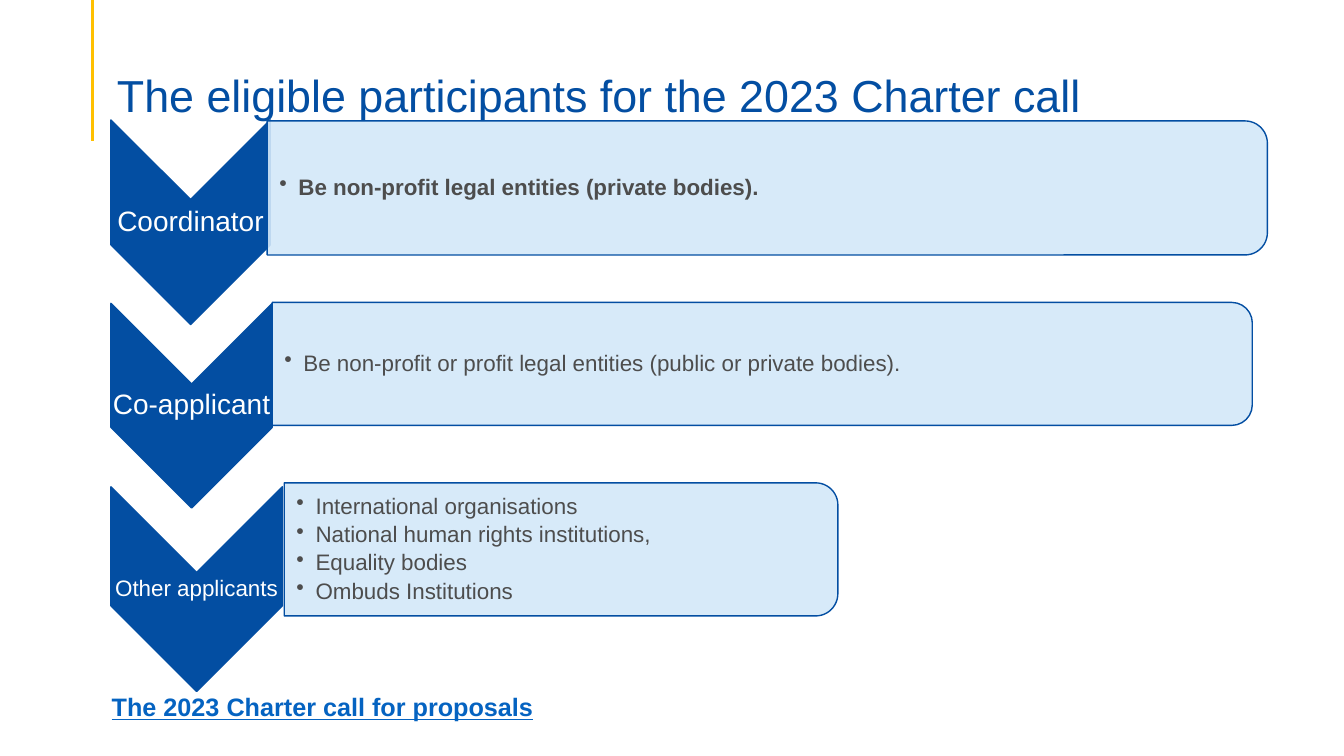
from lxml.etree import SubElement
from pptx import Presentation
from pptx.dml.color import RGBColor
from pptx.enum.shapes import MSO_CONNECTOR, MSO_SHAPE
from pptx.enum.text import MSO_ANCHOR, MSO_AUTO_SIZE, PP_ALIGN
from pptx.oxml.ns import qn
from pptx.util import Pt

PX = 9144
BLUE = RGBColor(0x03, 0x4E, 0xA2)
PALE_BLUE = RGBColor(0xD3, 0xE8, 0xF9)
YELLOW = RGBColor(0xFF, 0xC0, 0x00)
GREY = RGBColor(0x4D, 0x4D, 0x4D)
LINK_BLUE = RGBColor(0x05, 0x63, 0xC1)
WHITE = RGBColor(0xFF, 0xFF, 0xFF)

CHEVRON_LEFT, CHEVRON_TOP, CHEVRON_HEIGHT, ROW_PITCH = 110, 119, 203, 182
ROWS = [
    ("Coordinator", 20, 158, 45, (265, 120, 992, 133), True,
     ["Be non-profit legal entities (private bodies)."]),
    ("Co-applicant", 20, 160, 42, (270, 300, 972, 122), False,
     ["Be non-profit or profit legal entities (public or private bodies)."]),
    ("Other applicants", 16, 170, 33, (282, 479, 549, 132), False,
     ["International organisations", "National human rights institutions,",
      "Equality bodies", "Ombuds Institutions"]),
]


class SlideBuilder:
    font_name = "Arial"

    def __init__(self, presentation):
        self.slide = presentation.slides.add_slide(presentation.slide_layouts[5])

    def style(self, paragraph, size, color, bold=False):
        font = paragraph.font
        font.name, font.size, font.bold = self.font_name, Pt(size), bold
        font.color.rgb = color

    def frame(self, shape, insets, anchor):
        frame = shape.text_frame
        frame.word_wrap = True
        frame.auto_size = MSO_AUTO_SIZE.NONE
        frame.vertical_anchor = anchor
        (frame.margin_left, frame.margin_top,
         frame.margin_right, frame.margin_bottom) = [inset * PX for inset in insets]
        return frame

    def title(self, text, left, top, width, height):
        title = self.slide.shapes.title
        title.left, title.top = left * PX, top * PX
        title.width, title.height = width * PX, height * PX
        frame = self.frame(title, (10, 5, 10, 0), MSO_ANCHOR.BOTTOM)
        frame.text = text
        paragraph = frame.paragraphs[0]
        paragraph.alignment = PP_ALIGN.LEFT
        paragraph.line_spacing = 0.9
        self.style(paragraph, 32, BLUE)

    def line(self, x1, y1, x2, y2, color, width):
        line = self.slide.shapes.add_connector(
            MSO_CONNECTOR.STRAIGHT, x1 * PX, y1 * PX, x2 * PX, y2 * PX)
        line.line.color.rgb = color
        line.line.width = Pt(width)
        SubElement(line._element.spPr, qn("a:effectLst"))

    def turned_shape(self, kind, left, top, width, height, fill, opacity=100):
        shift = (width - height) * PX // 2
        shape = self.slide.shapes.add_shape(
            kind, left * PX + shift, top * PX - shift, height * PX, width * PX)
        shape.rotation = 90
        shape.shadow.inherit = False
        shape.fill.solid()
        shape.fill.fore_color.rgb = fill
        shape.line.color.rgb = BLUE
        shape.line.width = Pt(1)
        if opacity < 100:
            color = shape._element.spPr.find(qn("a:solidFill"))[0]
            SubElement(color, qn("a:alpha"), val=str(opacity * 1000))

    def text(self, lines, left, top, width, height, size, color, bold=False,
             insets=(1, 1, 1, 1), anchor=MSO_ANCHOR.MIDDLE):
        box = self.slide.shapes.add_textbox(left * PX, top * PX, width * PX, height * PX)
        frame = self.frame(box, insets, anchor)
        frame.text = "\n".join(lines)
        for paragraph in frame.paragraphs:
            self.style(paragraph, size, color, bold)
        return frame.paragraphs

    def label(self, text, left, top, width, height, size):
        paragraph = self.text([text], left, top, width, height, size, WHITE)[0]
        paragraph.alignment = PP_ALIGN.CENTER
        paragraph.line_spacing = 0.9
        paragraph.space_after = Pt(size * 0.4)

    def bullets(self, lines, left, top, width, height, bold):
        for paragraph in self.text(lines, left, top, width, height, 16, GREY, bold,
                                   insets=(12, 1, 1, 1)):
            paragraph.level = 1
            paragraph.line_spacing = 0.9
            paragraph.space_after = Pt(3)
            properties = paragraph._p.get_or_add_pPr()
            properties.set("marL", str(19 * PX))
            properties.set("indent", str(-19 * PX))
            bullet = properties.makeelement(qn("a:buChar"), {"char": "•"})
            properties.find(qn("a:defRPr")).addprevious(bullet)


def main():
    presentation = Presentation()
    presentation.slide_width, presentation.slide_height = 1333 * PX, 750 * PX
    builder = SlideBuilder(presentation)
    builder.line(92, 0, 92, 140, YELLOW, 2.25)
    builder.title("The eligible participants for the 2023 Charter call", 106, 53, 1150, 68)

    for row, (name, size, width, label_height, panel, bold, lines) in enumerate(ROWS):
        top = CHEVRON_TOP + row * ROW_PITCH
        builder.turned_shape(MSO_SHAPE.CHEVRON, CHEVRON_LEFT, top, width,
                             CHEVRON_HEIGHT, BLUE)
        builder.label(name, CHEVRON_LEFT, top + (CHEVRON_HEIGHT - label_height) // 2,
                      width, label_height, size)
        builder.turned_shape(MSO_SHAPE.ROUND_2_SAME_RECTANGLE, *panel, PALE_BLUE, opacity=90)
        panel_left, panel_top, panel_width, panel_height = panel
        builder.bullets(lines, panel_left, panel_top + 6, panel_width - 6,
                        panel_height - 12, bold)

    link = builder.text(["The 2023 Charter call for proposals"], 101, 681, 440, 40, 18,
                        LINK_BLUE, True, insets=(10, 5, 10, 5), anchor=MSO_ANCHOR.TOP)[0]
    link.font.underline = True
    presentation.save("out.pptx")


if __name__ == "__main__":
    main()
